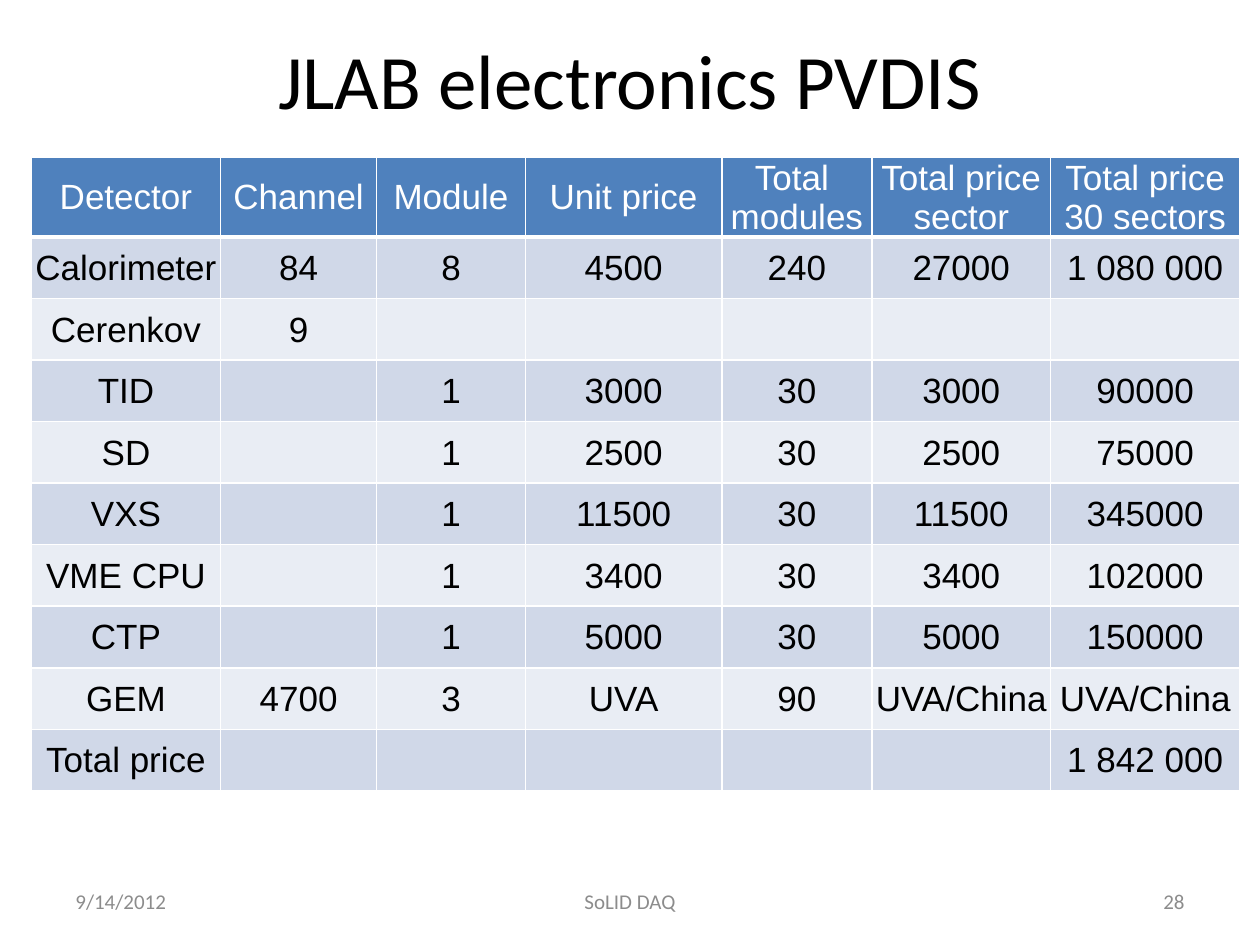
from dataclasses import dataclass

from pptx import Presentation
from pptx.dml.color import RGBColor
from pptx.enum import text
from pptx.oxml import xmlchemy
from pptx.util import Pt

BLACK = RGBColor(0x00, 0x00, 0x00)
WHITE = RGBColor(0xFF, 0xFF, 0xFF)
GREY = RGBColor(0x8C, 0x8C, 0x8C)
HEADER_BLUE = RGBColor(0x4F, 0x81, 0xBD)
BAND_DARK = RGBColor(0xD0, 0xD8, 0xE8)
BAND_LIGHT = RGBColor(0xE9, 0xED, 0xF4)

LEFT, CENTER, RIGHT = text.PP_ALIGN.LEFT, text.PP_ALIGN.CENTER, text.PP_ALIGN.RIGHT

HEADER_HEIGHT = 43.92
ROW_HEIGHT = 35.2
COLUMN_WIDTHS = (108, 89.28, 84.96, 112.32, 85.68, 102.24, 108)
PRICES = (
    ("Detector", "Channel", "Module", "Unit price", "Total \nmodules",
     "Total price sector", "Total price 30 sectors"),
    ("Calorimeter", "84", "8", "4500", "240", "27000", "1 080 000"),
    ("Cerenkov", "9", "", "", "", "", ""),
    ("TID", "", "1", "3000", "30", "3000", "90000"),
    ("SD", "", "1", "2500", "30", "2500", "75000"),
    ("VXS", "", "1", "11500", "30", "11500", "345000"),
    ("VME CPU", "", "1", "3400", "30", "3400", "102000"),
    ("CTP", "", "1", "5000", "30", "5000", "150000"),
    ("GEM", "4700", "3", "UVA", "90", "UVA/China", "UVA/China"),
    ("Total price", "", "", "", "", "", "1 842 000"),
)


@dataclass(frozen=True)
class FooterItem:
    label: str
    left: float
    width: float
    align: text.PP_ALIGN


FOOTER = (
    FooterItem("9/14/2012", 36, 168, LEFT),
    FooterItem("28", 516, 168, RIGHT),
    FooterItem("SoLID DAQ", 246, 228, CENTER),
)


def format_text(tf, font: str, size: float, color: RGBColor, align) -> None:
    for p in tf.paragraphs:
        p.alignment = align
        for r in p.runs:
            r.font.name = font
            r.font.size = Pt(size)
            r.font.bold = False
            r.font.color.rgb = color


def add_border(cell, side: str, width: float) -> None:
    tc_pr = cell._tc.get_or_add_tcPr()
    ln = xmlchemy.OxmlElement(f"a:{side}")
    ln.set("w", str(Pt(width)))
    fill = xmlchemy.OxmlElement("a:solidFill")
    color = xmlchemy.OxmlElement("a:srgbClr")
    color.set("val", str(WHITE))
    fill.append(color)
    ln.append(fill)
    tc_pr.append(ln)


def fill_cell(cell, label: str, row: int) -> None:
    cell.text = label
    cell.vertical_anchor = text.MSO_ANCHOR.MIDDLE
    cell.margin_left = cell.margin_right = cell.margin_top = Pt(0.72)
    cell.margin_bottom = 0
    format_text(cell.text_frame, "Arial", 20, BLACK if row else WHITE, CENTER)
    add_border(cell, "lnL", 1)
    add_border(cell, "lnR", 1)
    add_border(cell, "lnT", 3 if row == 1 else 1)
    add_border(cell, "lnB", 1 if row else 3)
    cell.fill.solid()
    band = BAND_DARK if row % 2 else BAND_LIGHT
    cell.fill.fore_color.rgb = band if row else HEADER_BLUE


def add_price_table(s) -> None:
    height = HEADER_HEIGHT + ROW_HEIGHT * (len(PRICES) - 1)
    table = s.shapes.add_table(
        len(PRICES), len(COLUMN_WIDTHS),
        Pt(18), Pt(90), Pt(sum(COLUMN_WIDTHS)), Pt(height)).table
    for column, width in zip(table.columns, COLUMN_WIDTHS):
        column.width = Pt(width)
    for i, labels in enumerate(PRICES):
        table.rows[i].height = Pt(ROW_HEIGHT if i else HEADER_HEIGHT)
        for j, label in enumerate(labels):
            fill_cell(table.cell(i, j), label, i)


def add_footer_item(s, item: FooterItem) -> None:
    sp = s.shapes.add_textbox(Pt(item.left), Pt(500.5), Pt(item.width), Pt(28.75))
    tf = sp.text_frame
    tf.word_wrap = True
    tf.vertical_anchor = text.MSO_ANCHOR.MIDDLE
    tf.text = item.label
    format_text(tf, "Calibri", 12, GREY, item.align)


def main() -> None:
    prs = Presentation()
    prs.slide_width, prs.slide_height = Pt(720), Pt(540)
    s = prs.slides.add_slide(prs.slide_layouts[5])

    title = s.shapes.title
    title.left, title.top, title.width, title.height = Pt(36), Pt(0), Pt(648), Pt(90)
    title.text_frame.text = "JLAB electronics PVDIS"
    title.text_frame.vertical_anchor = text.MSO_ANCHOR.MIDDLE
    format_text(title.text_frame, "Calibri", 44, BLACK, CENTER)

    add_price_table(s)
    for item in FOOTER:
        add_footer_item(s, item)
    prs.save("out.pptx")


if __name__ == "__main__":
    main()
